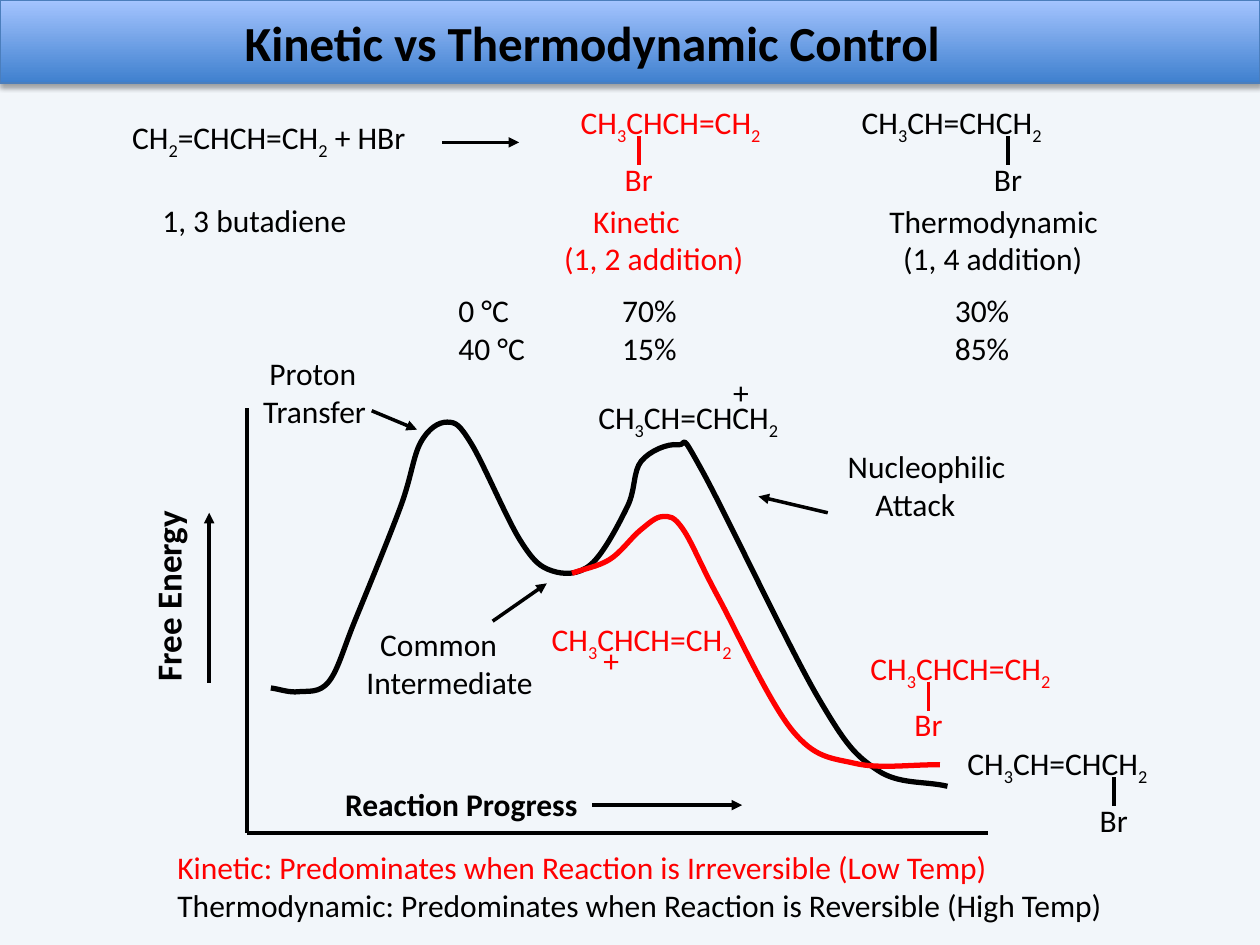
import itertools

import lxml.etree
import pptx
import pptx.dml.color
import pptx.enum.shapes
import pptx.enum.text
import pptx.oxml.ns
import pptx.util

SLIDE_WIDTH = pptx.util.Inches(10)
SLIDE_HEIGHT = pptx.util.Inches(7.5)
COLUMN = SLIDE_WIDTH / 10
ROW = SLIDE_HEIGHT / 7.5
COLORS = {
    "background": "F2F6FA", "black": "000000", "kinetic": "FF0000",
    "banner_bottom": "3F80CE", "banner_top": "A4C4FF", "banner_edge": "4B7EBC",
}
KINETIC_FORMULA = "CH3CHCH=CH2"
THERMODYNAMIC_FORMULA = "CH3CH=CHCH2"
LINE_HEIGHT = 0.4
TWO_LINES = 0.71


def rgb(name):
    """Return the named colour."""
    return pptx.dml.color.RGBColor.from_string(COLORS[name])


def place(left, top, width, height):
    """Turn grid columns and rows into slide lengths."""
    return [round(length) for length in (left * COLUMN, top * ROW, width * COLUMN, height * ROW)]


def add_element(parent, tag, **attributes):
    """Append a drawing element with the given attributes."""
    element = lxml.etree.SubElement(parent, pptx.oxml.ns.qn(tag))
    for name, value in attributes.items():
        element.set(name, str(value))
    return element


def add_text(shapes, box, *lines, color="black", colors=(), size=18, bold=False,
             formula=False, indents=(), tabs=(), rotation=0):
    """Add a text box; formula digits become subscripts, indents apply per line."""
    shape = shapes.add_textbox(*place(*box))
    shape.rotation = rotation
    frame = shape.text_frame
    frame.word_wrap = bool(tabs)
    frame.auto_size = pptx.enum.text.MSO_AUTO_SIZE.SHAPE_TO_FIT_TEXT
    for index, line in enumerate(lines):
        paragraph = frame.add_paragraph() if index else frame.paragraphs[0]
        properties = paragraph._p.get_or_add_pPr()
        if indents:
            properties.set("marL", str(round(indents[index] * COLUMN)))
        if tabs:
            tab_list = add_element(properties, "a:tabLst")
            for position in tabs:
                add_element(tab_list, "a:tab", pos=round(position * COLUMN), algn="l")
        pieces = itertools.groupby(line, str.isdigit) if formula else [(False, line)]
        for subscript, characters in pieces:
            run = paragraph.add_run()
            run.text = "".join(characters)
            run.font.name = "Calibri"
            run.font.size = pptx.util.Pt(size)
            run.font.bold = bold
            run.font.color.rgb = rgb(colors[index] if colors else color)
            if subscript:
                run.font._element.set("baseline", "-25000")
    return shape


def add_line(shapes, start, end, color="black", arrow=False):
    """Add a straight line between two grid points."""
    connector = shapes.add_connector(
        pptx.enum.shapes.MSO_CONNECTOR.STRAIGHT, *place(*start, *end))
    connector.line.width = pptx.util.Pt(2)
    connector.line.color.rgb = rgb(color)
    if arrow:
        add_element(connector.line._get_or_add_ln(), "a:tailEnd", type="triangle")
    add_element(connector._element.spPr, "a:effectLst")


def add_curve(shapes, left, top, knots, color):
    """Add a smooth Catmull-Rom curve through knots relative to a corner."""
    points = [place(left + x, top + y, 0, 0)[:2] for x, y in knots]
    builder = shapes.build_freeform(*points[0])
    builder.add_line_segments(points[1:], close=False)
    shape = builder.convert_to_shape()
    shape.shadow.inherit = False
    shape.fill.background()
    shape.line.width = pptx.util.Pt(3)
    shape.line.color.rgb = rgb(color)
    local = [(int(point.get("x")), int(point.get("y")))
             for point in shape._element.iter(pptx.oxml.ns.qn("a:pt"))]
    before = tuple(2 * a - b for a, b in zip(local[0], local[1]))
    after = tuple(2 * a - b for a, b in zip(local[-1], local[-2]))
    padded = [before, *local, after]
    segments = list(shape._element.iter(pptx.oxml.ns.qn("a:lnTo")))
    for segment, previous, start, end, following in zip(
            segments, padded, padded[1:], padded[2:], padded[3:]):
        leaving = [s + (e - p) / 6 for p, s, e in zip(previous, start, end)]
        arriving = [e - (f - s) / 6 for s, e, f in zip(start, end, following)]
        bezier = add_element(segment.getparent(), "a:cubicBezTo")
        for x, y in (leaving, arriving, end):
            add_element(bezier, "a:pt", x=round(x), y=round(y))
        segment.getparent().replace(segment, bezier)


def add_bromide(slide, left, top, formula, bond, color):
    """Add a grouped product formula with bromine hanging from its bond."""
    shapes = slide.shapes.add_group_shape().shapes
    add_text(shapes, (left, top, 1.67, LINE_HEIGHT), formula, color=color, formula=True)
    add_line(shapes, (left + bond, top + 0.31), (left + bond, top + 0.54), color)
    add_text(shapes, (left + bond - 0.21, top + 0.45, 0.43, LINE_HEIGHT), "Br", color=color)


def add_cation(slide, left, top, formula, charge, color):
    """Add a cation formula with its charge at the given offset."""
    add_text(slide.shapes, (left, top, 1.67, LINE_HEIGHT), formula, color=color, formula=True)
    add_text(slide.shapes, (left + charge[0], top + charge[1], 0.33, LINE_HEIGHT), "+", color=color)


def add_banner(slide, left, top, width, height):
    """Add the shaded title banner."""
    banner = slide.shapes.add_shape(
        pptx.enum.shapes.MSO_SHAPE.RECTANGLE, *place(left, top, width, height))
    banner.fill.gradient()
    banner.fill.gradient_angle = 90
    for stop, name in zip(banner.fill.gradient_stops, ("banner_bottom", "banner_top")):
        stop.color.rgb = rgb(name)
    banner.line.color.rgb = rgb("banner_edge")
    banner.line.width = pptx.util.Pt(0.75)
    banner.shadow.inherit = False
    effects = banner._element.spPr.find(pptx.oxml.ns.qn("a:effectLst"))
    shadow = add_element(effects, "a:outerShdw", blurRad=pptx.util.Pt(3.1),
                         dist=pptx.util.Pt(1.8), dir=5400000, rotWithShape=0)
    add_element(add_element(shadow, "a:srgbClr", val=COLORS["black"]), "a:alpha", val=35000)
    frame = banner.text_frame
    frame.margin_right = round(0.7 * COLUMN)
    frame.vertical_anchor = pptx.enum.text.MSO_ANCHOR.MIDDLE
    paragraph = frame.paragraphs[0]
    paragraph.alignment = pptx.enum.text.PP_ALIGN.CENTER
    paragraph.text = "Kinetic vs Thermodynamic Control"
    paragraph.font.name = "Calibri"
    paragraph.font.size = pptx.util.Pt(28)
    paragraph.font.bold = True
    paragraph.font.color.rgb = rgb("black")


def add_reaction(slide, left, top):
    """Add the reaction equation, product names and yields."""
    shapes = slide.shapes
    add_text(shapes, (left, top + 0.12, 2.48, LINE_HEIGHT), "CH2=CHCH=CH2 + HBr", formula=True)
    add_line(shapes, (left + 2.56, top + 0.36), (left + 3.17, top + 0.36), arrow=True)
    add_bromide(slide, left + 3.56, top, KINETIC_FORMULA, 0.56, "kinetic")
    add_bromide(slide, left + 5.79, top, THERMODYNAMIC_FORMULA, 1.26, "black")
    add_text(shapes, (left + 0.24, top + 0.78, 1.68, LINE_HEIGHT), "1, 3 butadiene")
    add_text(shapes, (left + 3.43, top + 0.78, 1.64, TWO_LINES),
             "Kinetic", "(1, 2 addition)", color="kinetic", indents=(0.23, 0))
    add_text(shapes, (left + 6.01, top + 0.78, 1.87, TWO_LINES),
             "Thermodynamic", "(1, 4 addition)", indents=(0, 0.11))
    add_text(shapes, (left + 2.59, top + 1.49, 4.66, TWO_LINES),
             "0 °C\t70%\t30%", "40 °C\t15%\t85%", tabs=(1.3, 3.94))


def add_energy_diagram(slide, left, top, width, height):
    """Add the axes, both energy curves and their labels."""
    shapes = slide.shapes
    bottom = top + height
    add_line(shapes, (left, top), (left, bottom))
    add_line(shapes, (left + width, bottom), (left, bottom))
    add_curve(shapes, left, top, [
        (0.19, 2.22), (0.41, 2.25), (0.65, 2.17), (0.86, 1.68), (1.22, 0.78), (1.38, 0.27),
        (1.59, 0.11), (1.78, 0.28), (2.17, 1.05), (2.42, 1.29), (2.73, 1.24), (3.02, 0.78),
        (3.13, 0.42), (3.42, 0.29), (3.61, 0.49), (4.53, 2.29), (5, 2.87), (5.56, 3)], "black")
    add_curve(shapes, left, top, [
        (2.58, 1.31), (2.88, 1.2), (3.12, 0.97), (3.3, 0.86), (3.46, 0.96), (3.74, 1.5),
        (4.33, 2.56), (4.83, 2.82), (5.5, 2.83)], "kinetic")
    add_text(shapes, (left - 1.41, top + 1.26, 1.57, 0.44), "Free Energy",
             size=20, bold=True, rotation=270)
    add_text(shapes, (left + 0.68, top + 2.94, 2.06, LINE_HEIGHT), "Reaction Progress", bold=True)
    add_text(shapes, (left + 0.03, top - 0.48, 1.03, TWO_LINES),
             "Proton", "Transfer", indents=(0.05, 0))
    add_text(shapes, (left + 4.61, top + 0.26, 1.53, TWO_LINES),
             "Nucleophilic", "Attack", indents=(0.06, 0.28))
    add_text(shapes, (left + 0.85, top + 1.67, 1.54, TWO_LINES),
             "Common", "Intermediate", indents=(0.11, 0))
    arrows = [((-0.3, 2.18), (-0.3, 0.83)), ((2.74, 3.15), (3.93, 3.15)),
              ((4.61, 0.83), (4.06, 0.7)), ((0.99, 0.02), (1.35, 0.17)),
              ((1.95, 1.69), (2.38, 1.39))]
    for start, end in arrows:
        add_line(shapes, (left + start[0], top + start[1]),
                 (left + end[0], top + end[1]), arrow=True)
    add_cation(slide, left + 2.69, top - 0.13, THERMODYNAMIC_FORMULA, (1.07, -0.2), "black")
    add_cation(slide, left + 2.32, top + 1.63, KINETIC_FORMULA, (0.41, 0.17), "kinetic")
    add_bromide(slide, left + 4.85, top + 1.86, KINETIC_FORMULA, 0.56, "kinetic")
    add_bromide(slide, left + 5.62, top + 2.62, THERMODYNAMIC_FORMULA, 1.26, "black")


def add_summary(slide, left, top, width):
    """Add the two closing statements."""
    add_text(slide.shapes, (left, top, width, TWO_LINES),
             "Kinetic: Predominates when Reaction is Irreversible (Low Temp)",
             "Thermodynamic: Predominates when Reaction is Reversible (High Temp)",
             colors=("kinetic", "black"))


def main():
    """Build and save the presentation."""
    presentation = pptx.Presentation()
    presentation.slide_width = SLIDE_WIDTH
    presentation.slide_height = SLIDE_HEIGHT
    slide = presentation.slides.add_slide(presentation.slide_layouts[6])
    slide.background.fill.solid()
    slide.background.fill.fore_color.rgb = rgb("background")
    add_energy_diagram(slide, 1.96, 3.24, 5.88, 3.37)
    add_reaction(slide, 0.95, 0.77)
    add_banner(slide, 0, 0, 10, 0.66)
    add_summary(slide, 1.31, 6.68, 7.63)
    presentation.save("out.pptx")


if __name__ == "__main__":
    main()
